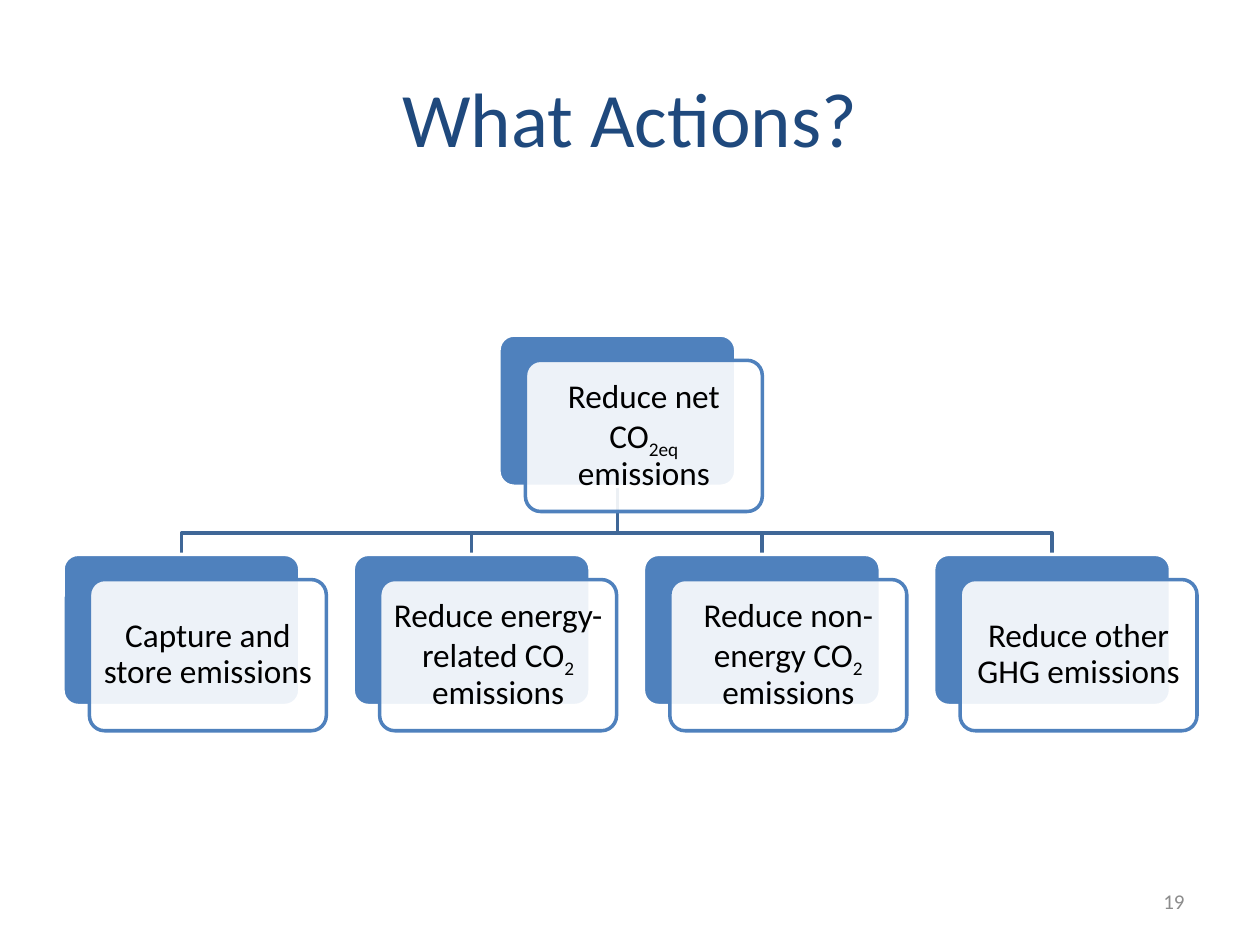
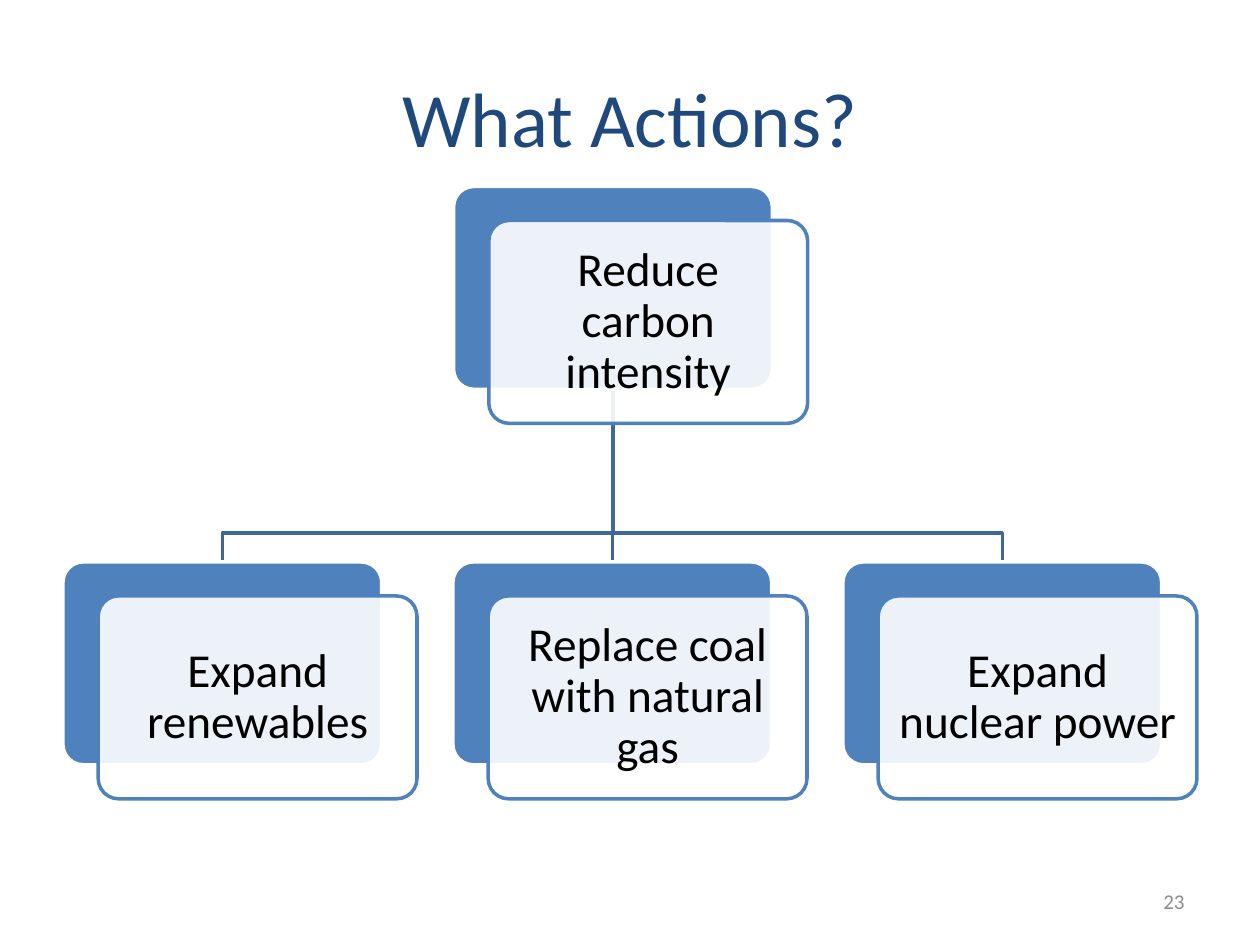
from lxml import etree
from pptx import Presentation
from pptx.dml.color import RGBColor
from pptx.enum.shapes import MSO_SHAPE
from pptx.enum.text import MSO_ANCHOR, PP_ALIGN
from pptx.oxml.ns import qn
from pptx.util import Inches, Pt

ROUNDED = MSO_SHAPE.ROUNDED_RECTANGLE
MIDDLE = MSO_ANCHOR.MIDDLE
CENTER, RIGHT = PP_ALIGN.CENTER, PP_ALIGN.RIGHT

NAVY = RGBColor(0x1F, 0x49, 0x7D)
BLUE = RGBColor(0x4F, 0x81, 0xBD)
LINK = RGBColor(0x3F, 0x67, 0x97)
GREY = RGBColor(0x8C, 0x8C, 0x8C)
WHITE = RGBColor(0xFF, 0xFF, 0xFF)
BLACK = RGBColor(0, 0, 0)
FONT = "Calibri"

# Content: a label is a list of runs, every second run is a subscript
TREES = [
    {
        "title": "What Actions?", "number": "19",
        "root": ["Reduce net CO", "2eq ", "emissions"],
        "children": [
            ["Capture and store emissions"],
            ["Reduce energy-related CO", "2", " emissions"],
            ["Reduce non-energy CO", "2", " emissions"],
            ["Reduce other GHG emissions"],
        ],
        "root_at": (3.96, 2.66), "child_top": 4.4, "last_left": 7.41,
        "box": (1.88, 1.2), "shift": (0.21, 0.2), "size": 19,
        "root_inset": 0.11, "child_inset": 0.07,
    },
    {
        "title": "What Actions?", "number": "23",
        "root": ["Reduce carbon intensity"],
        "children": [
            ["Expand renewables"],
            ["Replace coal with natural gas"],
            ["Expand nuclear power"],
        ],
        "root_at": (3.6, 1.48), "child_top": 4.46, "last_left": 6.69,
        "box": (2.53, 1.61), "shift": (0.28, 0.27), "size": 27,
        "root_inset": 0.11, "child_inset": 0.11,
    },
]
FIRST_LEFT = 0.5
BRANCH_Y = 4.23


def write(tf, runs, size, color, align, inset=None):
    tf.word_wrap = True
    tf.vertical_anchor = MIDDLE
    if inset is not None:
        for side in ("left", "right", "top", "bottom"):
            setattr(tf, f"margin_{side}", Inches(inset))
    p = tf.paragraphs[0]
    p.alignment = align
    for i, text in enumerate(runs):
        r = p.add_run()
        r.text = text
        for name, value in {"name": FONT, "size": Pt(size)}.items():
            setattr(r.font, name, value)
        r.font.color.rgb = color
        if i % 2:
            r._r.get_or_add_rPr().set("baseline", "-25000")
    return p


def add_box(s, left, top, size, fill, line):
    sp = s.shapes.add_shape(ROUNDED, *map(Inches, (left, top, *size)))
    sp.adjustments[0] = 0.1
    sp.shadow.inherit = False
    sp.fill.solid()
    sp.fill.fore_color.rgb = fill
    sp.line.color.rgb = line
    sp.line.width = Pt(2)
    return sp


def add_card(s, left, top, label, tree, inset):
    """Blue back plate with a translucent white label plate in front."""
    dx, dy = tree["shift"]
    add_box(s, left, top, tree["box"], BLUE, WHITE)
    plate = add_box(s, left + dx, top + dy, tree["box"], WHITE, BLUE)
    color = plate.element.spPr.find(qn("a:solidFill"))[0]
    etree.SubElement(color, qn("a:alpha")).set("val", "90000")
    p = write(plate.text_frame, label, tree["size"], BLACK, CENTER, inset)
    p.line_spacing = 0.9


def add_branch(s, x1, y1, x2, y2):
    points = [(x1, BRANCH_Y), (x2, BRANCH_Y), (x2, y2)]
    path = s.shapes.build_freeform(Inches(x1), Inches(y1))
    path.add_line_segments([(Inches(x), Inches(y)) for x, y in points], close=False)
    sp = path.convert_to_shape()
    sp.shadow.inherit = False
    sp.fill.background()
    sp.line.color.rgb = LINK
    sp.line.width = Pt(2)


def add_tree_slide(prs, tree):
    s = prs.slides.add_slide(prs.slide_layouts[5])

    # Title
    title = s.shapes.title
    title.left, title.top, title.width, title.height = map(Inches, (0.5, 0.3, 9, 1.25))
    write(title.text_frame, [tree["title"]], 44, NAVY, CENTER)

    # Branches, behind the cards
    width, height = tree["box"]
    root_left, root_top = tree["root_at"]
    child_top = tree["child_top"]
    step = (tree["last_left"] - FIRST_LEFT) / (len(tree["children"]) - 1)
    lefts = [FIRST_LEFT + i * step for i in range(len(tree["children"]))]
    for left in lefts:
        add_branch(s, root_left + width / 2, root_top + height,
                   left + width / 2, child_top)

    # Cards
    add_card(s, root_left, root_top, tree["root"], tree, tree["root_inset"])
    for left, label in zip(lefts, tree["children"]):
        add_card(s, left, child_top, label, tree, tree["child_inset"])

    # Page number
    number = s.shapes.add_textbox(*map(Inches, (7.17, 6.95, 2.33, 0.4)))
    write(number.text_frame, [tree["number"]], 12, GREY, RIGHT)


def main():
    prs = Presentation()
    prs.slide_width, prs.slide_height = Inches(10), Inches(7.5)
    for tree in TREES:
        add_tree_slide(prs, tree)
    prs.save("out.pptx")


if __name__ == "__main__":
    main()
